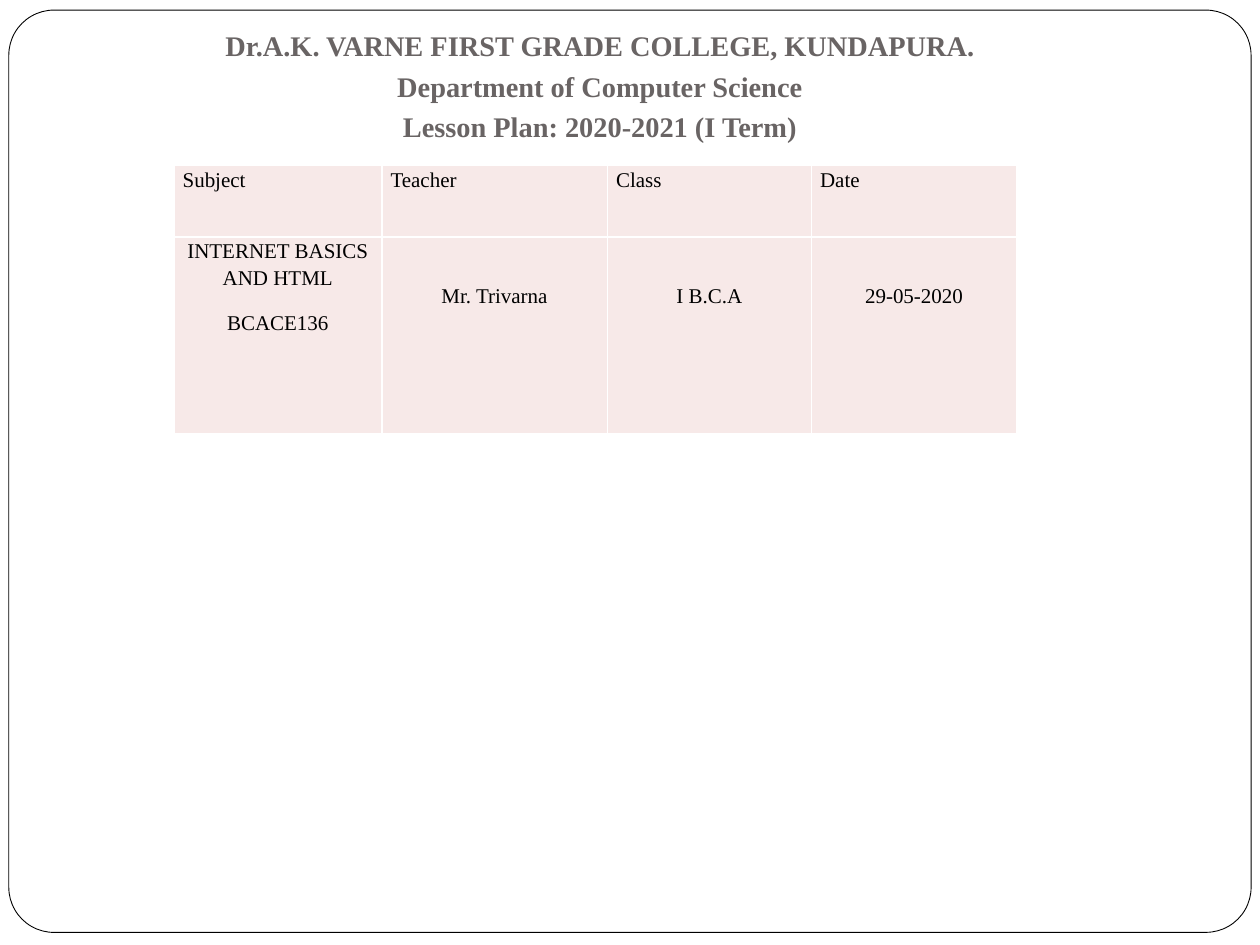
from dataclasses import dataclass

from lxml import etree
from pptx import Presentation
from pptx.dml.color import RGBColor
from pptx.enum.shapes import MSO_SHAPE
from pptx.enum.text import MSO_ANCHOR, MSO_AUTO_SIZE, PP_ALIGN
from pptx.oxml.ns import qn
from pptx.util import Inches, Pt

ROUNDED = MSO_SHAPE.ROUNDED_RECTANGLE
BOTTOM = MSO_ANCHOR.BOTTOM
NO_AUTOFIT = MSO_AUTO_SIZE.NONE
LEFT, CENTER = PP_ALIGN.LEFT, PP_ALIGN.CENTER
TITLE_ONLY = 5


@dataclass(frozen=True)
class Theme:
    font: str = "Times New Roman"
    title_size: float = 16.2
    table_size: float = 12
    title_color: str = "696464"
    text_color: str = "000000"
    background: str = "FFFFFF"
    frame_line: str = "000000"
    cell_fill: str = "F7E9E8"
    cell_border: str = "FFFFFF"


HEADING = [
    "Dr.A.K. VARNE FIRST GRADE COLLEGE, KUNDAPURA.",
    "Department of Computer Science",
    "Lesson Plan: 2020-2021 (I Term)",
]
COLUMNS = [
    ("Subject", 1.65, ["INTERNET BASICS AND HTML", "BCACE136"]),
    ("Teacher", 1.79, ["Mr. Trivarna"]),
    ("Class", 1.62, ["I B.C.A"]),
    ("Date", 1.63, ["29-05-2020"]),
]
ROW_HEIGHTS = [0.57, 1.56]
SINGLE_LINE_DROP = 0.35


def write_text(frame, lines, *, font, size, color, bold=False,
               align=LEFT, spacing=1.15, after=10):
    """Fill a text frame with one formatted paragraph per line."""
    frame.word_wrap = True
    for index, line in enumerate(lines):
        paragraph = frame.paragraphs[0] if index == 0 else frame.add_paragraph()
        paragraph.alignment = align
        paragraph.line_spacing = spacing
        paragraph.space_before = Pt(0)
        paragraph.space_after = Pt(after)
        run = paragraph.add_run()
        run.text = line
        run.font.name = font
        run.font.size = Pt(size)
        run.font.bold = bold
        run.font.color.rgb = RGBColor.from_string(color)


def set_borders(cell, color, width):
    properties = cell._tc.get_or_add_tcPr()
    for index, side in enumerate(("lnL", "lnR", "lnT", "lnB")):
        line = etree.Element(qn(f"a:{side}"), w=str(Pt(width)))
        fill = etree.SubElement(line, qn("a:solidFill"))
        etree.SubElement(fill, qn("a:srgbClr"), val=color)
        properties.insert(index, line)


class SlideBuilder:
    def __init__(self, slide, theme):
        self.slide = slide
        self.theme = theme

    def add_frame(self, left, top, width, height):
        """Draw the rounded page border behind everything else."""
        shape = self.slide.shapes.add_shape(
            ROUNDED, Inches(left), Inches(top), Inches(width), Inches(height))
        shape.adjustments[0] = 0.049
        shape.shadow.inherit = False
        shape.fill.solid()
        shape.fill.fore_color.rgb = RGBColor.from_string(self.theme.background)
        shape.line.color.rgb = RGBColor.from_string(self.theme.frame_line)
        shape.line.width = Pt(0.5)
        shape.element.getparent().insert(2, shape.element)

    def set_title(self, lines, left, top, width, height):
        title = self.slide.shapes.title
        title.left, title.top = Inches(left), Inches(top)
        title.width, title.height = Inches(width), Inches(height)
        frame = title.text_frame
        frame.auto_size = NO_AUTOFIT
        frame.vertical_anchor = BOTTOM
        frame.margin_bottom = Inches(0.4)
        write_text(frame, lines, font=self.theme.font,
                   size=self.theme.title_size, color=self.theme.title_color,
                   bold=True, align=CENTER, spacing=1.2, after=0)

    def add_table(self, columns, row_heights, left, top):
        width = sum(column[1] for column in columns)
        table = self.slide.shapes.add_table(
            len(row_heights), len(columns), Inches(left), Inches(top),
            Inches(width), Inches(sum(row_heights))).table
        table.first_row = table.horz_banding = False
        for row, height in zip(table.rows, row_heights):
            row.height = Inches(height)
        for index, (header, column_width, details) in enumerate(columns):
            table.columns[index].width = Inches(column_width)
            drop = SINGLE_LINE_DROP if len(details) == 1 else 0
            self.fill_cell(table.cell(0, index), [header])
            self.fill_cell(table.cell(1, index), details, CENTER, drop)

    def fill_cell(self, cell, lines, align=LEFT, margin_top=0):
        cell.margin_left = cell.margin_right = Inches(0.07)
        cell.margin_top, cell.margin_bottom = Inches(margin_top), 0
        cell.fill.solid()
        cell.fill.fore_color.rgb = RGBColor.from_string(self.theme.cell_fill)
        set_borders(cell, self.theme.cell_border, 1)
        write_text(cell.text_frame, lines, font=self.theme.font,
                   size=self.theme.table_size, color=self.theme.text_color,
                   align=align)


def main():
    presentation = Presentation()
    presentation.slide_width, presentation.slide_height = Inches(10), Inches(7.5)
    slide = presentation.slides.add_slide(presentation.slide_layouts[TITLE_ONLY])
    builder = SlideBuilder(slide, Theme())
    builder.add_frame(0.07, 0.08, 9.86, 7.32)
    builder.set_title(HEADING, 0.51, 0.52, 8.5, 1.02)
    builder.add_table(COLUMNS, ROW_HEIGHTS, 1.38, 1.31)
    presentation.save("out.pptx")


if __name__ == "__main__":
    main()
